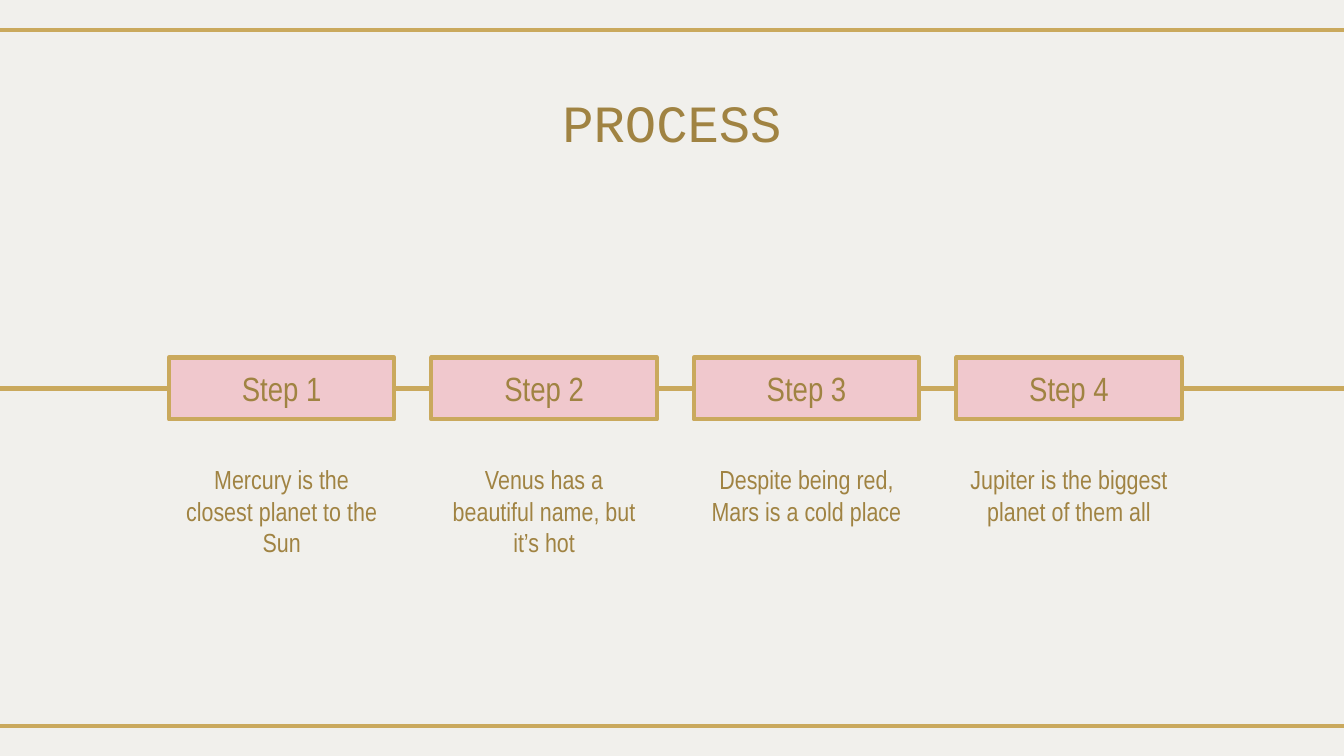
from lxml import etree
from pptx import Presentation
from pptx.dml.color import RGBColor
from pptx.enum.shapes import MSO_CONNECTOR, MSO_SHAPE
from pptx.enum.text import MSO_ANCHOR, MSO_AUTO_SIZE, PP_ALIGN
from pptx.oxml.ns import qn
from pptx.util import Pt

RECT, STRAIGHT = MSO_SHAPE.RECTANGLE, MSO_CONNECTOR.STRAIGHT
TOP, MIDDLE = MSO_ANCHOR.TOP, MSO_ANCHOR.MIDDLE
NO_FIT, CENTER = MSO_AUTO_SIZE.NONE, PP_ALIGN.CENTER

WIDTH, HEIGHT = 720, 405
COMPARISON_LAYOUT = 4  # a title and four text placeholders

STEPS = [
    ("Step 1", "Mercury is the closest planet to the Sun"),
    ("Step 2", "Venus has a beautiful name, but it’s hot"),
    ("Step 3", "Despite being red, Mars is a cold place"),
    ("Step 4", "Jupiter is the biggest planet of them all"),
]
BOX_LEFT, BOX_TOP, BOX_W, BOX_H = 90.5, 191.5, 120.8, 33.2
PITCH = 140.6
AXIS_Y = BOX_TOP + BOX_H / 2


def rgb(value):
    return RGBColor.from_string(value)


def set_attrs(obj, values):
    for name, value in values.items():
        setattr(obj, name, value)


class Deck:
    """Holds the style and the current slide."""

    background, pink, gold, brown = "F1F0EC", "F0C8CD", "CAA95D", "A08342"
    heading_font, text_font = "Courier New", "Arial Narrow"
    line_width = 2.25
    inset = 7.2

    def __init__(self, s):
        self.s = s
        s.background.fill.solid()
        s.background.fill.fore_color.rgb = rgb(self.background)

    def outline(self, sp):
        sp.line.color.rgb = rgb(self.gold)
        sp.line.width = Pt(self.line_width)

    def text(self, sp, text, size, font, anchor=TOP):
        tf = sp.text_frame
        margins = {f"margin_{side}": Pt(self.inset)
                   for side in ("left", "top", "right", "bottom")}
        set_attrs(tf, {"word_wrap": True, "auto_size": NO_FIT,
                       "vertical_anchor": anchor, **margins})
        p = tf.paragraphs[0]
        set_attrs(p, {"alignment": CENTER, "space_before": Pt(0)})
        r = p.add_run()
        r.text = text
        set_attrs(r.font, {"name": font, "size": Pt(size), "bold": False})
        r.font.color.rgb = rgb(self.brown)
        return p

    def place(self, sp, left, top, width, height):
        set_attrs(sp, {"left": Pt(left), "top": Pt(top),
                       "width": Pt(width), "height": Pt(height)})

    def title(self, text, *box):
        sp = self.s.shapes.title
        self.place(sp, *box)
        self.text(sp, text, 28, self.heading_font)

    def description(self, sp, text, *box):
        self.place(sp, *box)
        pPr = self.text(sp, text, 14, self.text_font)._p.get_or_add_pPr()
        pPr.set("marL", "0")
        pPr.set("indent", "0")
        etree.SubElement(pPr, qn("a:buNone"))

    def box(self, fill, left, top, width, height):
        sp = self.s.shapes.add_shape(
            RECT, Pt(left), Pt(top), Pt(width), Pt(height))
        sp.shadow.inherit = False
        sp.fill.solid()
        sp.fill.fore_color.rgb = rgb(fill)
        self.outline(sp)
        return sp

    def step(self, label, *box):
        self.text(self.box(self.pink, *box), label, 18, self.text_font, MIDDLE)

    def horizontal(self, x1, x2, y):
        cxn = self.s.shapes.add_connector(STRAIGHT, Pt(x1), Pt(y), Pt(x2), Pt(y))
        self.outline(cxn)
        etree.SubElement(cxn._element.spPr, qn("a:effectLst"))


def main():
    prs = Presentation()
    set_attrs(prs, {"slide_width": Pt(WIDTH), "slide_height": Pt(HEIGHT)})
    s = prs.slides.add_slide(prs.slide_layouts[COMPARISON_LAYOUT])
    deck = Deck(s)

    deck.box(deck.background, -31, 388.8, 809.3, 38.2)
    deck.box(deck.background, -76.3, -22.3, 809.3, 38.2)
    deck.title("PROCESS", 47.5, 41, 625, 45.4)

    bodies = [ph for ph in s.placeholders if ph.placeholder_format.idx > 0]
    lefts = [BOX_LEFT + i * PITCH for i in range(len(STEPS))]
    for (label, text), body, left in zip(STEPS, bodies, lefts):
        deck.step(label, left, BOX_TOP, BOX_W, BOX_H)
        deck.description(body, text, left - 0.3, 241.2, 121.4, 49.7)

    starts = [-3.6] + [left + BOX_W for left in lefts]
    ends = lefts + [WIDTH + 3.6]
    for x1, x2 in zip(starts, ends):
        deck.horizontal(x1, x2, AXIS_Y)

    prs.save("out.pptx")


if __name__ == "__main__":
    main()
